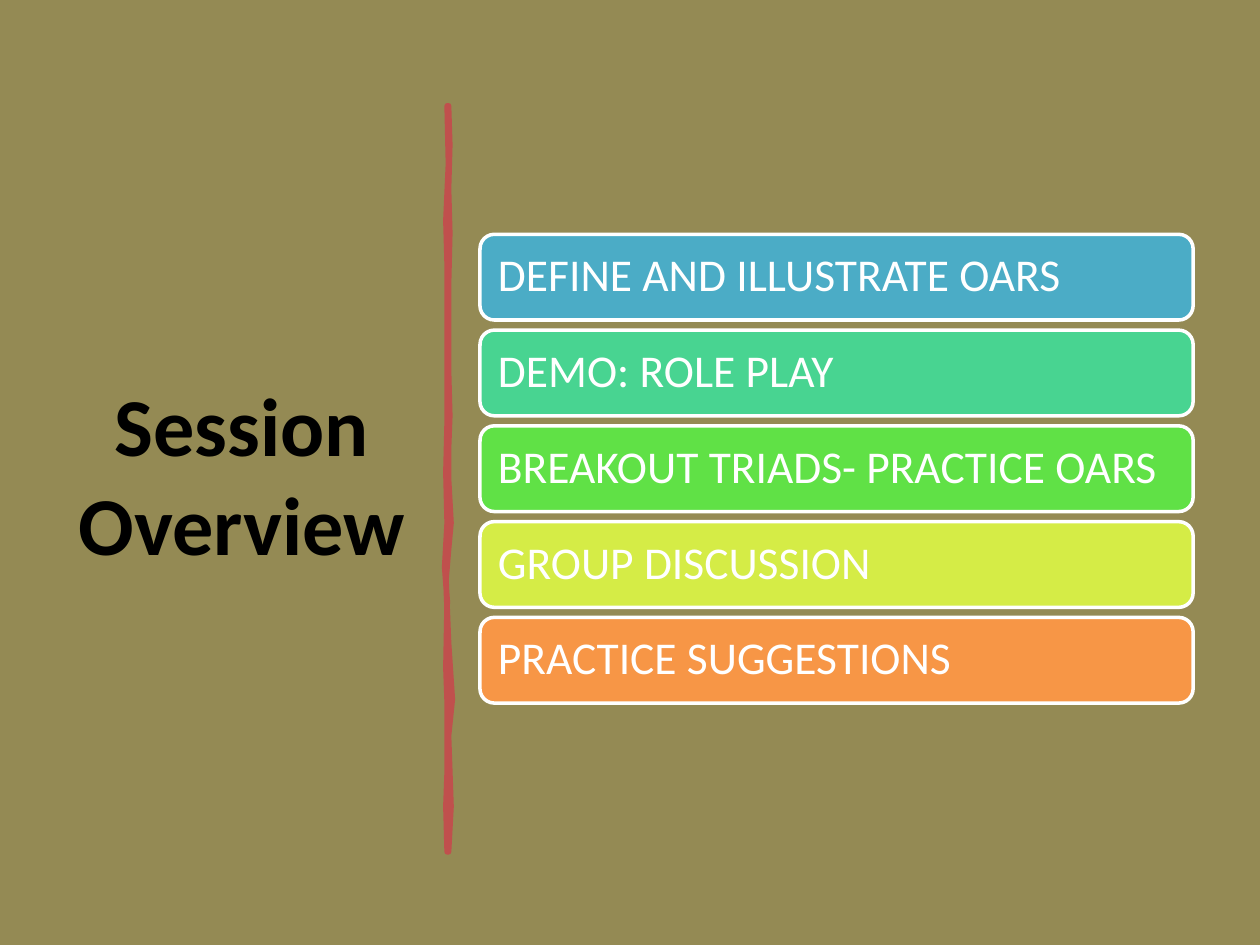
"""Build the session overview slide with its agenda cards."""
from dataclasses import dataclass

from pptx import Presentation
from pptx.dml.color import RGBColor
from pptx.enum.shapes import MSO_SHAPE
from pptx.enum.text import MSO_ANCHOR, MSO_AUTO_SIZE, PP_ALIGN
from pptx.shapes.autoshape import Shape
from pptx.slide import Slide
from pptx.util import Inches, Pt

ROUNDED = MSO_SHAPE.ROUNDED_RECTANGLE
MIDDLE = MSO_ANCHOR.MIDDLE
NO_AUTOFIT = MSO_AUTO_SIZE.NONE
LEFT, CENTER = PP_ALIGN.LEFT, PP_ALIGN.CENTER
TITLE_ONLY = 5
FONT = "Calibri"
COLORS = {
    "background": "948A54",
    "title": "000000",
    "divider": "C0504D",
    "white": "FFFFFF",
    "blue": "4BACC6",
    "teal": "48D491",
    "green": "60E146",
    "lime": "D5EC46",
    "orange": "F79646",
}
CARD_LEFT, CARD_TOP, CARD_WIDTH, CARD_HEIGHT = 3.81, 1.86, 5.66, 0.68
CARD_PITCH = 0.76
CARD_INSET = 0.11
DIVIDER_RIGHT = [
    (3.56, 0.84), (3.57, 1.15), (3.56, 1.5), (3.57, 1.85), (3.56, 2.26),
    (3.56, 2.94), (3.57, 3.3), (3.56, 3.56), (3.56, 3.8), (3.58, 4.15),
    (3.56, 4.36), (3.54, 4.6), (3.56, 5.1), (3.59, 5.55), (3.56, 5.84),
    (3.58, 6.4), (3.56, 6.76),
]
DIVIDER_LEFT = [
    (3.55, 6.76), (3.54, 6.4), (3.55, 6.13), (3.55, 5.57), (3.54, 5.3),
    (3.55, 4.77), (3.53, 4.5), (3.55, 4.15), (3.54, 3.75), (3.55, 3.35),
    (3.55, 2.5), (3.55, 2.1), (3.54, 1.75), (3.56, 1.3), (3.55, 0.84),
]


@dataclass(frozen=True)
class AgendaItem:
    """One agenda card."""
    label: str
    color: str


AGENDA = [
    AgendaItem("DEFINE AND ILLUSTRATE OARS", "blue"),
    AgendaItem("DEMO: ROLE PLAY", "teal"),
    AgendaItem("BREAKOUT TRIADS- PRACTICE OARS", "green"),
    AgendaItem("GROUP DISCUSSION", "lime"),
    AgendaItem("PRACTICE SUGGESTIONS", "orange"),
]


def rgb(name: str) -> RGBColor:
    """Look up a named colour."""
    return RGBColor.from_string(COLORS[name])


def write_text(shape: Shape, text: str, *, size: float, color: str,
               bold: bool = False, align: PP_ALIGN = LEFT,
               spacing: float = 1.0) -> None:
    """Put one formatted paragraph in a shape."""
    frame = shape.text_frame
    frame.text = text
    frame.word_wrap = True
    frame.auto_size = NO_AUTOFIT
    frame.vertical_anchor = MIDDLE
    paragraph = frame.paragraphs[0]
    paragraph.alignment = align
    paragraph.line_spacing = spacing
    font = paragraph.runs[0].font
    font.name, font.size, font.bold = FONT, Pt(size), bold
    font.color.rgb = rgb(color)


def paint(shape: Shape, fill: str, line: str, width: float) -> None:
    """Set fill and outline, without a shadow."""
    shape.shadow.inherit = False
    shape.fill.solid()
    shape.fill.fore_color.rgb = rgb(fill)
    shape.line.color.rgb = rgb(line)
    shape.line.width = Pt(width)


def add_title(slide: Slide) -> None:
    """Place the slide title on the left."""
    title = slide.shapes.title
    title.left, title.top = Inches(0.52), Inches(0.7)
    title.width, title.height = Inches(2.8), Inches(6.11)
    write_text(title, "Session Overview", size=47, color="title",
               bold=True, align=CENTER)


def add_divider(slide: Slide) -> None:
    """Draw the hand-drawn vertical divider."""
    start, *outline = [(Inches(x), Inches(y))
                       for x, y in DIVIDER_RIGHT + DIVIDER_LEFT]
    builder = slide.shapes.build_freeform(*start)
    builder.add_line_segments(outline, close=True)
    paint(builder.convert_to_shape(), "divider", "divider", 3.25)


def add_card(slide: Slide, item: AgendaItem, top: float) -> None:
    """Draw one agenda card."""
    card = slide.shapes.add_shape(ROUNDED, Inches(CARD_LEFT), Inches(top),
                                  Inches(CARD_WIDTH), Inches(CARD_HEIGHT))
    paint(card, item.color, "white", 2)
    write_text(card, item.label, size=26, color="white", spacing=0.9)
    frame = card.text_frame
    frame.margin_left = frame.margin_right = Inches(CARD_INSET)
    frame.margin_top = frame.margin_bottom = Inches(CARD_INSET)


def main() -> None:
    """Build and save the presentation."""
    deck = Presentation()
    deck.slide_width, deck.slide_height = Inches(10), Inches(7.5)
    slide = deck.slides.add_slide(deck.slide_layouts[TITLE_ONLY])
    slide.background.fill.solid()
    slide.background.fill.fore_color.rgb = rgb("background")
    add_title(slide)
    add_divider(slide)
    for row, item in enumerate(AGENDA):
        add_card(slide, item, CARD_TOP + row * CARD_PITCH)
    deck.save("out.pptx")


if __name__ == "__main__":
    main()
